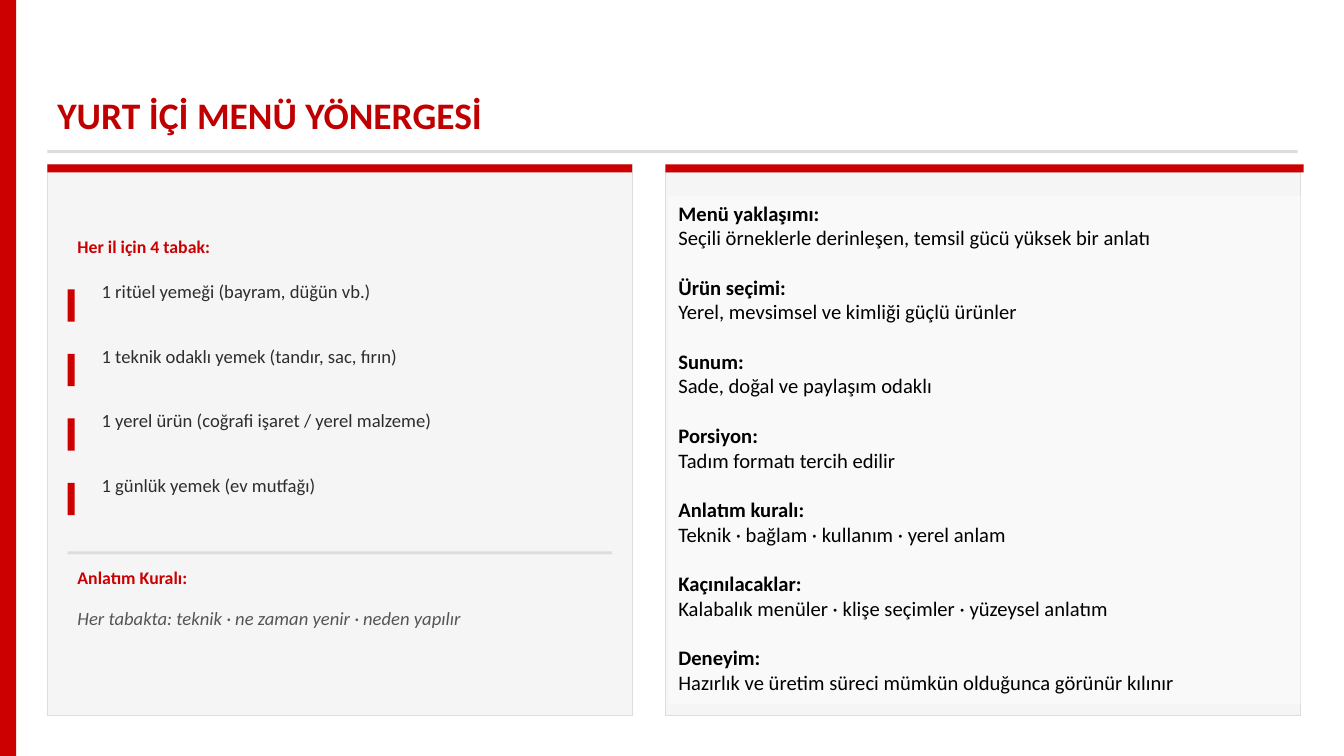
from copy import deepcopy
from lxml import etree
from pptx import Presentation
from pptx.dml.color import RGBColor
from pptx.enum.shapes import MSO_SHAPE as Shape
from pptx.enum.text import MSO_ANCHOR as Anchor, PP_ALIGN as Align
from pptx.oxml.ns import qn
from pptx.util import Pt

PX = 9144
RED = RGBColor(0xCC, 0x00, 0x00)
DARK_RED = RGBColor(0xC0, 0x00, 0x00)
PANEL = RGBColor(0xF5, 0xF5, 0xF5)
RULE = RGBColor(0xDD, 0xDD, 0xDD)
INK = RGBColor(0x2D, 0x2D, 0x2D)
GREY = RGBColor(0x55, 0x55, 0x55)
BLACK = RGBColor(0x00, 0x00, 0x00)
WHITE = RGBColor(0xFF, 0xFF, 0xFF)

deck = Presentation()
deck.slide_width, deck.slide_height = 1333 * PX, 750 * PX
page = deck.slides.add_slide(deck.slide_layouts[6])


def add_block(left, top, width, height, fill, border=None):
    block = page.shapes.add_shape(Shape.RECTANGLE, left * PX, top * PX, width * PX, height * PX)
    block.shadow.inherit = False
    block.fill.solid()
    block.fill.fore_color.rgb = fill
    if border is None:
        block.line.fill.background()
    else:
        block.line.color.rgb = border
        block.line.width = Pt(0.5)
    return block


def add_label(left, top, width, height, text, size, color, bold=False, italic=False):
    box = page.shapes.add_textbox(left * PX, top * PX, width * PX, height * PX)
    box.text_frame.word_wrap = True
    box.text_frame.text = text
    font = box.text_frame.paragraphs[0].runs[0].font
    font.name, font.size, font.bold, font.italic = "Calibri", Pt(size), bold, italic
    font.color.rgb = color


add_block(660, 171, 630, 539, PANEL, RULE)
add_block(0, 0, 16, 750, RED)
add_label(47, 86, 1240, 55, "YURT İÇİ MENÜ YÖNERGESİ", 26.7, DARK_RED, bold=True)
add_block(47, 149, 1240, 3, RULE)

add_block(47, 163, 580, 547, PANEL, RULE)
add_block(47, 163, 580, 8, RED)
add_label(67, 229, 540, 31, "Her il için 4 tabak:", 12.7, RED, bold=True)

dishes = [
    "1 ritüel yemeği (bayram, düğün vb.)",
    "1 teknik odaklı yemek (tandır, sac, fırın)",
    "1 yerel ürün (coğrafi işaret / yerel malzeme)",
    "1 günlük yemek (ev mutfağı)",
]
for index, dish in enumerate(dishes):
    top = 273 + 64 * index
    add_block(67, top + 14, 7, 32, RED)
    add_label(91, top, 517, 33, dish, 13.3, INK)

add_block(67, 547, 540, 3, RULE)
add_label(67, 557, 540, 31, "Anlatım Kuralı:", 12.7, RED, bold=True)
add_label(67, 597, 540, 33, "Her tabakta: teknik · ne zaman yenir · neden yapılır", 13.3, GREY, italic=True)

add_block(660, 163, 633, 8, RED)
guide = add_block(663, 194, 627, 504, WHITE)
fill_color = guide.fill._xPr.find(qn("a:solidFill"))[0]
etree.SubElement(fill_color, qn("a:alpha"), val="49000")
frame = guide.text_frame
frame.word_wrap = True
frame.vertical_anchor = Anchor.TOP

rules = [
    ("Menü yaklaşımı:", "Seçili örneklerle derinleşen, temsil gücü yüksek bir anlatı"),
    ("Ürün seçimi:", "Yerel, mevsimsel ve kimliği güçlü ürünler"),
    ("Sunum:", "Sade, doğal ve paylaşım odaklı"),
    ("Porsiyon:", "Tadım formatı tercih edilir"),
    ("Anlatım kuralı:", "Teknik · bağlam · kullanım · yerel anlam"),
    ("Kaçınılacaklar:", "Kalabalık menüler · klişe seçimler · yüzeysel anlatım"),
    ("Deneyim:", "Hazırlık ve üretim süreci mümkün olduğunca görünür kılınır"),
]
for index, (heading, detail) in enumerate(rules):
    para = frame.add_paragraph() if index else frame.paragraphs[0]
    para.text = f"{heading}\v{detail}"
    para.alignment = Align.LEFT
    if index:
        para.space_before = Pt(17.6)
    for span, bold in zip(para.runs, (True, False)):
        span.font.name, span.font.size, span.font.bold = "Calibri", Pt(14.7), bold
        span.font.color.rgb = BLACK
    line_break = para._p.find(qn("a:br"))
    line_break.append(deepcopy(para.runs[0]._r.find(qn("a:rPr"))))

deck.save("out.pptx")
